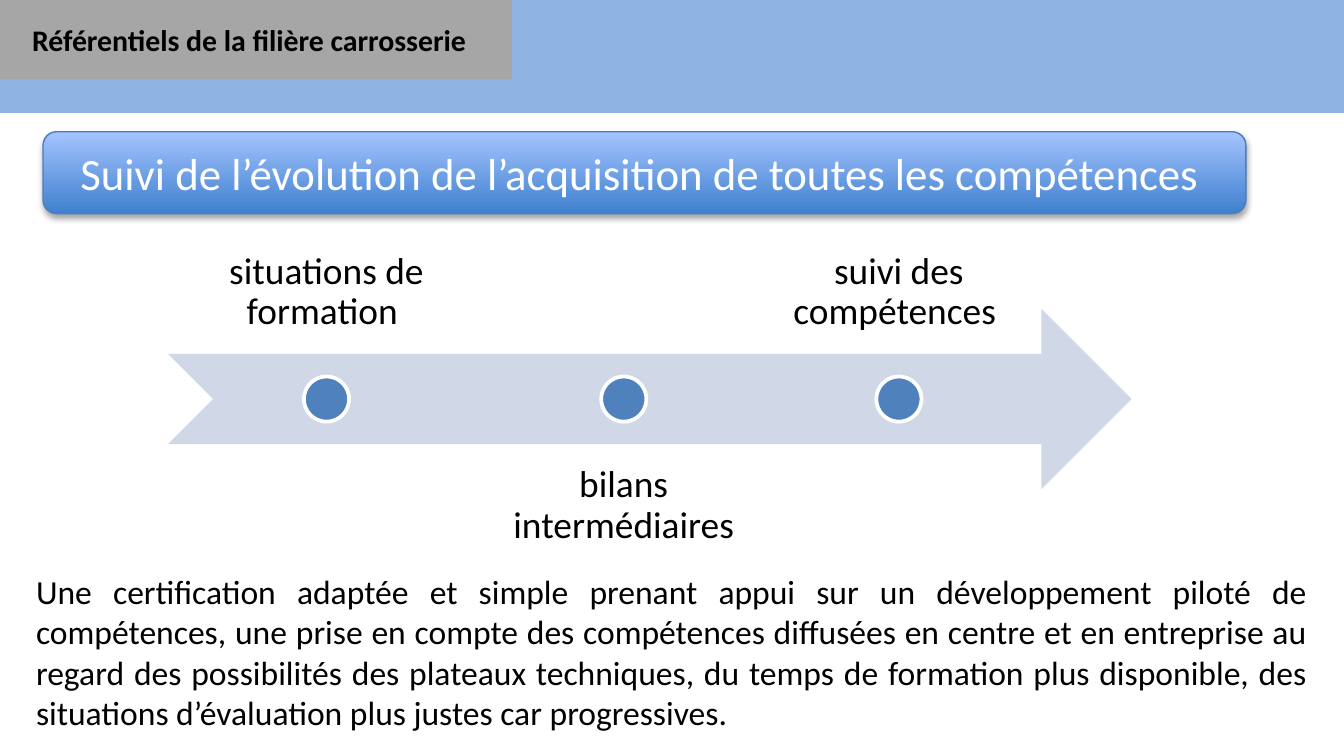
from dataclasses import dataclass

from lxml import etree
from pptx import Presentation
from pptx.dml.color import RGBColor
from pptx.enum.shapes import MSO_SHAPE
from pptx.enum.text import MSO_ANCHOR, MSO_AUTO_SIZE, PP_ALIGN
from pptx.oxml.ns import qn
from pptx.util import Inches, Pt

RECT, ROUND = MSO_SHAPE.RECTANGLE, MSO_SHAPE.ROUNDED_RECTANGLE
ARROW, OVAL = MSO_SHAPE.NOTCHED_RIGHT_ARROW, MSO_SHAPE.OVAL
TOP, MIDDLE, BOTTOM = MSO_ANCHOR.TOP, MSO_ANCHOR.MIDDLE, MSO_ANCHOR.BOTTOM
LEFT, CENTER, JUSTIFY = PP_ALIGN.LEFT, PP_ALIGN.CENTER, PP_ALIGN.JUSTIFY
GROW = MSO_AUTO_SIZE.SHAPE_TO_FIT_TEXT


@dataclass(frozen=True)
class Theme:
    font: str = "Calibri"
    ink: str = "000000"
    paper: str = "FFFFFF"
    band: str = "8EB4E3"
    tab: str = "A6A6A6"
    deep: str = "3F80CE"
    light: str = "A4C4FF"
    edge: str = "4B7EBC"
    arrow: str = "D0D8E8"
    dot: str = "4F81BD"
    head: int = 16
    title: int = 24
    step: int = 20
    body: int = 18


@dataclass(frozen=True)
class Box:
    x: float
    y: float
    w: float
    h: float

    def inner(self, x, y, w, h):
        """Return an inner box given in percent of this one."""
        return Box(self.x + self.w * x / 100, self.y + self.h * y / 100,
                   self.w * w / 100, self.h * h / 100)

    def emu(self):
        return [round(v) for v in (self.x, self.y, self.w, self.h)]


THEME = Theme()
STEPS = (  # left and width in percent, side of the arrow, label
    (0, 32.9, "up", "situations de formation "),
    (33.2, 28.2, "down", "bilans intermédiaires"),
    (61.7, 28.3, "up", "suivi des compétences "),
)
BODY = (
    "Une certification adaptée et simple prenant appui sur un développement "
    "piloté de compétences, une prise en compte des compétences diffusées en "
    "centre et en entreprise au regard des possibilités des plateaux "
    "techniques, du temps de formation plus disponible, des situations "
    "d’évaluation plus justes car progressives."
)


def rgb(code):
    return RGBColor.from_string(code)


def apply(item, values):
    for name, value in values.items():
        setattr(item, name, value)


def draw(shapes, kind, box, fill=None, line=None, width=1):
    shape = shapes.add_shape(kind, *box.emu())
    shape.shadow.inherit = False
    if fill:
        shape.fill.solid()
        shape.fill.fore_color.rgb = rgb(fill)
    if line:
        shape.line.color.rgb = rgb(line)
        shape.line.width = Pt(width)
    else:
        shape.line.fill.background()
    return shape


def write(shape, text, size, color=THEME.ink, bold=False, frame=None, para=None):
    apply(shape.text_frame, {"word_wrap": True, **(frame or {})})
    line = shape.text_frame.paragraphs[0]
    apply(line, {"alignment": LEFT, **(para or {})})
    run = line.add_run()
    run.text = text
    apply(run.font, {"name": THEME.font, "size": Pt(size), "bold": bold})
    run.font.color.rgb = rgb(color)


def label(shapes, box, text, size, **style):
    write(shapes.add_textbox(*box.emu()), text, size, **style)


def shade(shape):
    """Add a soft shadow straight below the shape."""
    effects = shape._element.spPr.find(qn("a:effectLst"))
    outer = etree.SubElement(effects, qn("a:outerShdw"), blurRad=str(Pt(3.1)),
                             dist=str(Pt(1.8)), dir="5400000", rotWithShape="0")
    color = etree.SubElement(outer, qn("a:srgbClr"), val=THEME.ink)
    etree.SubElement(color, qn("a:alpha"), val="35000")


def header(shapes, box):
    draw(shapes, RECT, box, THEME.band)
    draw(shapes, RECT, box.inner(0, 0, 38.1, 70.2), THEME.tab)
    label(shapes, box.inner(1.4, 13.1, 34.7, 44), "Référentiels de la filière carrosserie",
          THEME.head, bold=True, frame={"word_wrap": False, "auto_size": GROW})


def banner(shapes, box):
    shape = draw(shapes, ROUND, box, line=THEME.edge, width=0.75)
    shape.fill.gradient()
    shape.fill.gradient_angle = 90
    for stop, color in zip(shape.fill.gradient_stops, (THEME.deep, THEME.light)):
        stop.color.rgb = rgb(color)
    shade(shape)
    write(shape, "Suivi de l’évolution de l’acquisition de toutes les compétences ",
          THEME.title, THEME.paper, frame={"vertical_anchor": MIDDLE},
          para={"alignment": CENTER})


def process(shapes, box):
    """Draw the arrow with its dots, labels alternating above and below."""
    group = shapes.add_group_shape().shapes
    draw(group, ARROW, box.inner(0, 30, 100, 40), THEME.arrow)
    sides = {"up": (0, BOTTOM), "down": (60, TOP)}
    inset = dict.fromkeys(
        ("margin_left", "margin_right", "margin_top", "margin_bottom"), Inches(0.16))
    para = {"alignment": CENTER, "line_spacing": 0.9, "space_after": Pt(7)}
    size = box.h / box.w * 10
    for left, width, side, text in STEPS:
        top, anchor = sides[side]
        label(group, box.inner(left, top, width, 40), text, THEME.step,
              frame={"vertical_anchor": anchor, **inset}, para=para)
        draw(group, OVAL, box.inner(left + (width - size) / 2, 45, size, 10),
             THEME.dot, THEME.paper, 2)


def summary(shapes, box):
    label(shapes, box, BODY, THEME.body, frame={"auto_size": GROW},
          para={"alignment": JUSTIFY})


def main():
    deck = Presentation()
    deck.slide_width, deck.slide_height = Inches(10), Pt(405)
    shapes = deck.slides.add_slide(deck.slide_layouts[6]).shapes
    page = Box(0, 0, deck.slide_width, deck.slide_height)
    header(shapes, page.inner(0, 0, 100, 14.93))
    banner(shapes, page.inner(3.2, 17.42, 89.5, 10.84))
    process(shapes, page.inner(12.5, 22.93, 71.7, 59.73))
    summary(shapes, page.inner(1.7, 74.67, 96.6, 23.29))
    deck.save("out.pptx")


if __name__ == "__main__":
    main()
